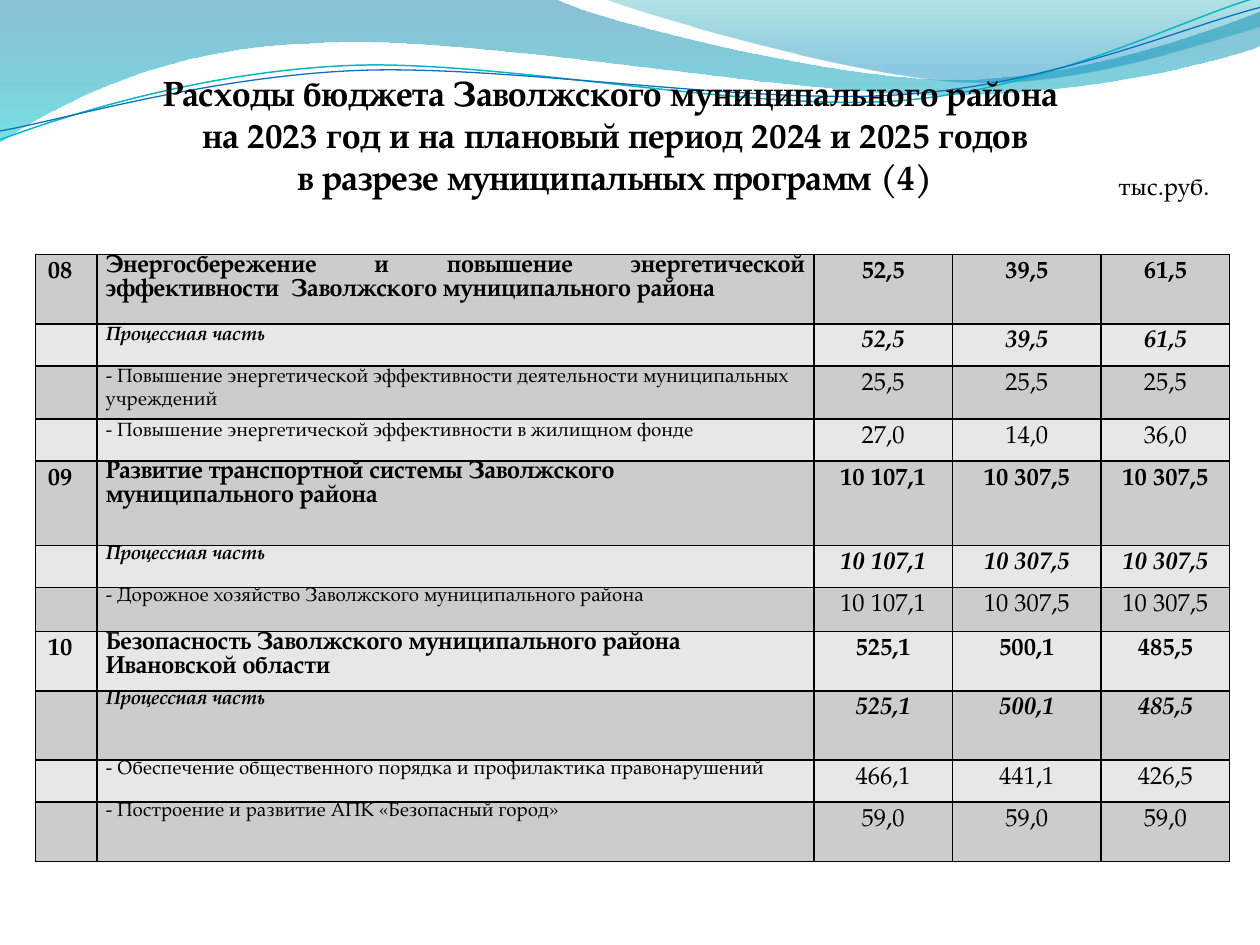
import math

import lxml.etree
import pptx
import pptx.dml.color
import pptx.enum.text
import pptx.oxml.ns
import pptx.util

Inches = pptx.util.Inches
Pt = pptx.util.Pt
qn = pptx.oxml.ns.qn
ALIGN = pptx.enum.text.PP_ALIGN
AUTO_SIZE = pptx.enum.text.MSO_AUTO_SIZE

FONT = "TeX Gyre Pagella"
BLACK = "000000"
BANDS = ("CCCCCC", "E7E7E7")
LINE_TILT = -2.7

# Each wave is a start point followed by lines (one point) and curves (three points).
LEFT_WAVE = [
    [(0, 0)], [(4.4, -0.01)],
    [(4.76, 0.17), (6.64, 0.63), (7.58, 0.63)],
    [(8.53, 0.63), (9.58, 0.26), (10, 0.09)],
    [(10.01, 0.36)],
    [(9.83, 0.44), (8.7, 0.76), (7.46, 0.75)],
    [(6.22, 0.75), (3.82, 0.28), (2.57, 0.34)],
    [(1.29, 0.36), (0.46, 0.83), (-0.01, 1.13)],
    [(0, 0)],
]
RIGHT_WAVE = [
    [(4.79, -0.01)],
    [(5.09, 0.11), (6.82, 0.62), (7.69, 0.65)],
    [(8.56, 0.69), (9.61, 0.32), (10, 0.21)],
    [(10, 0)],
    [(4.79, -0.01)],
]
TEAL_LINE = [
    [(0, 1.11)],
    [(0.48, 0.93), (1.58, 0.57), (2.77, 0.52)],
    [(3.95, 0.47), (5.93, 0.89), (7.13, 0.8)],
    [(8.33, 0.71), (9.38, 0.15), (9.98, -0.02)],
]
BLUE_LINE = [
    [(0, 1.04)],
    [(0.47, 0.96), (1.64, 0.61), (2.83, 0.56)],
    [(4.03, 0.51), (5.97, 0.84), (7.17, 0.75)],
    [(8.36, 0.67), (9.41, 0.21), (10, 0.06)],
]

TITLE = [
    "Расходы бюджета Заволжского муниципального района ",
    "на 2023 год и на плановый период 2024 и 2025 годов",
    "в разрезе муниципальных программ (4)",
]

COLUMN_WIDTHS = [0.49, 5.69, 1.1, 1.18, 1.02]
PROGRAM, PART, ITEM = "program", "part", "item"
NAME_FORMATS = {
    PROGRAM: dict(size=14, bold=True),
    PART: dict(size=11, bold=True, italic=True),
    ITEM: dict(size=11),
}
LOOSE_ROWS = range(1, 4)
# kind, row height, code, name, 2023, 2024, 2025
ROWS = [
    (PROGRAM, 0.55, "08", "Энергосбережение и повышение энергетической эффективности  "
     "Заволжского муниципального района ", "52,5", "39,5", "61,5"),
    (PART, 0.31, "", "Процессная часть", "52,5", "39,5", "61,5"),
    (ITEM, 0.38, "", "- Повышение энергетической эффективности деятельности "
     "муниципальных учреждений", "25,5", "25,5", "25,5"),
    (ITEM, 0.31, "", "- Повышение энергетической эффективности в жилищном фонде",
     "27,0", "14,0", "36,0"),
    (PROGRAM, 0.67, "09", "Развитие транспортной системы Заволжского "
     "муниципального района", "10 107,1", "10 307,5", "10 307,5"),
    (PART, 0.29, "", "Процессная часть", "10 107,1", "10 307,5", "10 307,5"),
    (ITEM, 0.35, "", "- Дорожное хозяйство Заволжского муниципального района",
     "10 107,1", "10 307,5", "10 307,5"),
    (PROGRAM, 0.47, "10", "Безопасность Заволжского муниципального района "
     "Ивановской области", "525,1", "500,1", "485,5"),
    (PART, 0.55, "", "Процессная часть", "525,1", "500,1", "485,5"),
    (ITEM, 0.31, "", "- Обеспечение общественного порядка и профилактика "
     "правонарушений", "466,1", "441,1", "426,5"),
    (ITEM, 0.47, "", "- Построение и развитие АПК «Безопасный город»",
     "59,0", "59,0", "59,0"),
]


def color(hex_string):
    return pptx.dml.color.RGBColor.from_string(hex_string)


def write_text(paragraph, text, size=14, bold=False, italic=False, align=ALIGN.LEFT, spacing=None):
    paragraph.alignment = align
    if spacing:
        paragraph.line_spacing = spacing
    if not text:  # an empty cell still needs its text size, or its row grows
        lxml.etree.SubElement(paragraph._p, qn("a:endParaRPr"), sz=str(size * 100))
        return
    run = paragraph.add_run()
    run.text = text
    run.font.name, run.font.size = FONT, Pt(size)
    run.font.bold, run.font.italic = bold, italic
    run.font.color.rgb = color(BLACK)


def turn(segments, degrees):
    """Turn the points about the middle between the first and the last one."""
    (x1, y1), (x2, y2) = segments[0][0], segments[-1][-1]
    middle_x, middle_y = (x1 + x2) / 2, (y1 + y2) / 2
    cosine, sine = math.cos(math.radians(degrees)), math.sin(math.radians(degrees))
    return [[(middle_x + (x - middle_x) * cosine - (y - middle_y) * sine,
              middle_y + (x - middle_x) * sine + (y - middle_y) * cosine)
             for x, y in segment] for segment in segments]


def add_outline(slide, left, top, segments, closed):
    """Build the outline from its corners, then bend the sides that have control points."""
    placed = [[(Inches(left + x), Inches(top + y)) for x, y in segment] for segment in segments]
    builder = slide.shapes.build_freeform(*placed[0][0])
    builder.add_line_segments([segment[-1] for segment in placed[1:]], close=closed)
    shape = builder.convert_to_shape()
    shape.shadow.inherit = False
    sides = list(shape.element.iter(qn("a:lnTo")))
    for side, segment in zip(sides, placed[1:]):
        if len(segment) == 3:
            curve = lxml.etree.Element(qn("a:cubicBezTo"))
            for x, y in segment:
                lxml.etree.SubElement(curve, qn("a:pt"), x=str(x - shape.left), y=str(y - shape.top))
            side.getparent().replace(side, curve)
    return shape


def add_wave(slide, left, top, segments, stops):
    """Add a wave filled from top to bottom; stops hold position, colour and opacity."""
    shape = add_outline(slide, left, top, segments, True)
    shape.line.fill.background()
    shape.fill.gradient()
    shape.fill.gradient_angle = 270
    for stop, (position, hex_string, _) in zip(shape.fill.gradient_stops, stops):
        stop.position = position
        stop.color.rgb = color(hex_string)
    for element, (_, _, opacity) in zip(shape.element.spPr.iter(qn("a:srgbClr")), stops):
        lxml.etree.SubElement(element, qn("a:alpha"), val=str(opacity * 1000))


def add_header_waves(slide, left, top):
    add_wave(slide, left, top, LEFT_WAVE, [(0, "0074A1", 45), (1, "00C6CF", 55)])
    add_wave(slide, left, top, RIGHT_WAVE, [(0, "00A1A9", 30), (0.8, "008BBF", 45)])
    for segments, hex_string, width in ((TEAL_LINE, "0AB8BF", 0.85), (BLUE_LINE, "0F6FC6", 0.75)):
        shape = add_outline(slide, left, top, turn(segments, -LINE_TILT), False)
        shape.rotation = LINE_TILT
        shape.fill.background()
        shape.line.color.rgb = color(hex_string)
        shape.line.width = Pt(width)


def place_title(slide, left, top, width, height):
    title = slide.shapes.title
    title.left, title.top = Inches(left), Inches(top)
    title.width, title.height = Inches(width), Inches(height)
    frame = title.text_frame
    frame.word_wrap = True
    frame.vertical_anchor = pptx.enum.text.MSO_ANCHOR.TOP
    frame.auto_size = AUTO_SIZE.SHAPE_TO_FIT_TEXT
    for index, line in enumerate(TITLE):
        paragraph = frame.add_paragraph() if index else frame.paragraphs[0]
        write_text(paragraph, line, size=20, bold=True, align=ALIGN.CENTER)
    slide.shapes.element.append(title.element)  # in front of the waves


def add_unit_label(slide, left, top, width, height):
    box = slide.shapes.add_textbox(Inches(left), Inches(top), Inches(width), Inches(height))
    box.text_frame.word_wrap = False
    box.text_frame.auto_size = AUTO_SIZE.SHAPE_TO_FIT_TEXT
    write_text(box.text_frame.paragraphs[0], "тыс.руб.")


def format_cell(cell, fill):
    properties = cell._tc.get_or_add_tcPr()
    for side in ("lnL", "lnR", "lnT", "lnB"):
        border = lxml.etree.SubElement(properties, qn(f"a:{side}"), w=str(Pt(1)))
        solid = lxml.etree.SubElement(border, qn("a:solidFill"))
        lxml.etree.SubElement(solid, qn("a:srgbClr"), val=BLACK)
    cell.fill.solid()
    cell.fill.fore_color.rgb = color(fill)


def add_budget_table(slide, left, top, width, height):
    table = slide.shapes.add_table(len(ROWS), len(COLUMN_WIDTHS), Inches(left), Inches(top),
                                   Inches(width), Inches(height)).table
    for column, column_width in zip(table.columns, COLUMN_WIDTHS):
        column.width = Inches(column_width)
    for index, (kind, row_height, code, name, *amounts) in enumerate(ROWS):
        table.rows[index].height = Inches(row_height)
        cells = list(table.rows[index].cells)
        for cell in cells:
            format_cell(cell, BANDS[index % 2])
        write_text(cells[0].text_frame.paragraphs[0], code, bold=True)
        name_cell = cells[1]
        name_cell.margin_left = name_cell.margin_right = Inches(0.07)
        name_cell.margin_top = name_cell.margin_bottom = 0
        write_text(name_cell.text_frame.paragraphs[0], name,
                   spacing=1.15 if index in LOOSE_ROWS else None,
                   align=ALIGN.LEFT if index else ALIGN.JUSTIFY, **NAME_FORMATS[kind])
        for cell, amount in zip(cells[2:], amounts):
            write_text(cell.text_frame.paragraphs[0], amount, align=ALIGN.CENTER,
                       bold=kind != ITEM, italic=kind == PART)


def main():
    presentation = pptx.Presentation()
    presentation.slide_width, presentation.slide_height = Inches(10), Inches(7.5)
    slide = presentation.slides.add_slide(presentation.slide_layouts.get_by_name("Title Only"))
    add_header_waves(slide, 0, 0)
    place_title(slide, 0.35, 0.52, 9.06, 1.11)
    add_unit_label(slide, 8.78, 1.31, 0.94, 0.34)
    add_budget_table(slide, 0.28, 2.02, 9.49, 4.82)
    presentation.save("out.pptx")


if __name__ == "__main__":
    main()
